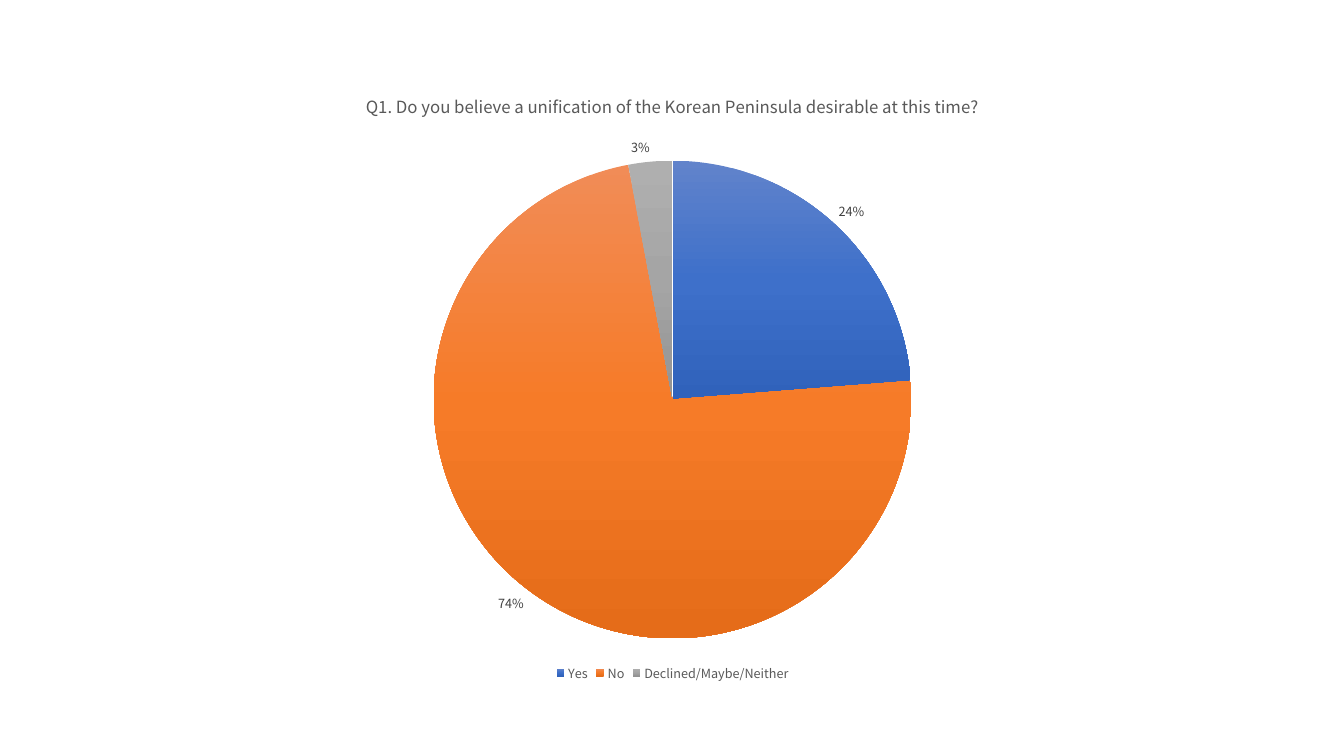
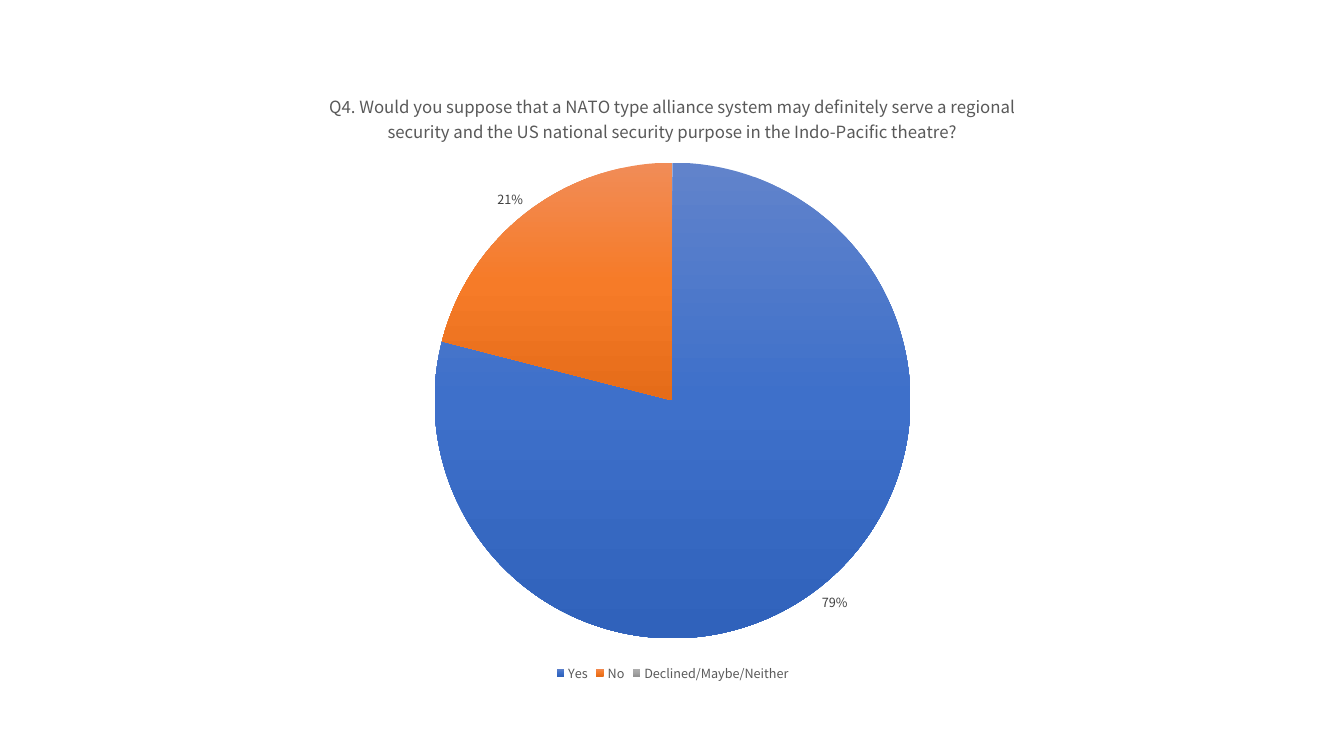
from copy import deepcopy

from pptx import Presentation
from pptx.chart.data import CategoryChartData
from pptx.dml.color import RGBColor
from pptx.enum.chart import XL_CHART_TYPE, XL_LABEL_POSITION, XL_LEGEND_POSITION
from pptx.oxml.ns import qn
from pptx.util import Inches, Pt

FONT = "Noto Sans CJK KR"
GREY = "595959"
DARK = "404040"
BOX = (2.14, 0.7, 9.06, 6.1)
NAMES = ["Yes", "No", "Declined/Maybe/Neither"]
SHADES = [
    ("6183CB", "3E70CA", "3062BB"),
    ("F18C57", "F67B28", "E56C19"),
    ("AFAFAF", "A5A5A5", "939393"),
]
POLLS = [
    ("Q1.", "Do you believe a unification of the Korean Peninsula "
     "desirable at this time?", (0.24, 0.74, 0.03)),
    ("Q4.", "Would you suppose that a NATO type alliance system may "
     "definitely serve a regional security and the US national security "
     "purpose in the Indo-Pacific theatre?", (0.79, 0.21, 0)),
]


def color(code):
    return RGBColor.from_string(code)


def style(font, size, code):
    font.name = FONT
    font.size = Pt(size)
    font.bold = False
    font.color.rgb = color(code)


def add_title(chart, parts):
    chart.has_title = True
    chart.chart_title.include_in_layout = False
    para = chart.chart_title.text_frame.paragraphs[0]
    style(para.font, 12, GREY)
    for part in parts:
        run = para.add_run()
        run.text = part
        style(run.font, 12, GREY)


def add_legend(chart):
    chart.has_legend = True
    legend = chart.legend
    legend.position = XL_LEGEND_POSITION.BOTTOM
    legend.include_in_layout = False
    style(legend.font, 9, GREY)


def add_labels(plot):
    plot.has_data_labels = True
    labels = plot.data_labels
    labels.show_value = True
    labels.show_percentage = False
    labels.number_format = "0%;;"
    labels.number_format_is_linked = False
    labels.position = XL_LABEL_POSITION.OUTSIDE_END
    style(labels.font, 9, DARK)


def shade(series):
    fills = [series.points[i].format.fill for i in range(len(SHADES))]
    for fill in fills:
        fill.gradient()
        fill.gradient_angle = 270
    for stops in series._element.iter(qn("a:gsLst")):
        stops.append(deepcopy(stops[0]))
    for fill, codes in zip(fills, SHADES):
        for stop, place, code in zip(fill.gradient_stops, (0, 0.5, 1), codes):
            stop.position = place
            stop.color.rgb = color(code)


def add_pie(slide, box, tag, text, values):
    parts = (tag, " ", text)
    data = CategoryChartData(number_format="0%")
    data.categories = NAMES
    data.add_series("".join(parts), values)
    frame = slide.shapes.add_chart(
        XL_CHART_TYPE.PIE, *map(Inches, box), data)
    chart = frame.chart
    style(chart.font, 10, "000000")
    add_title(chart, parts)
    add_legend(chart)
    plot = chart.plots[0]
    plot.vary_by_categories = True
    add_labels(plot)
    shade(plot.series[0])


def main():
    deck = Presentation()
    deck.slide_width = Inches(13.33)
    deck.slide_height = Inches(7.5)
    for poll in POLLS:
        slide = deck.slides.add_slide(deck.slide_layouts[6])
        add_pie(slide, BOX, *poll)
    deck.save("out.pptx")


if __name__ == "__main__":
    main()
